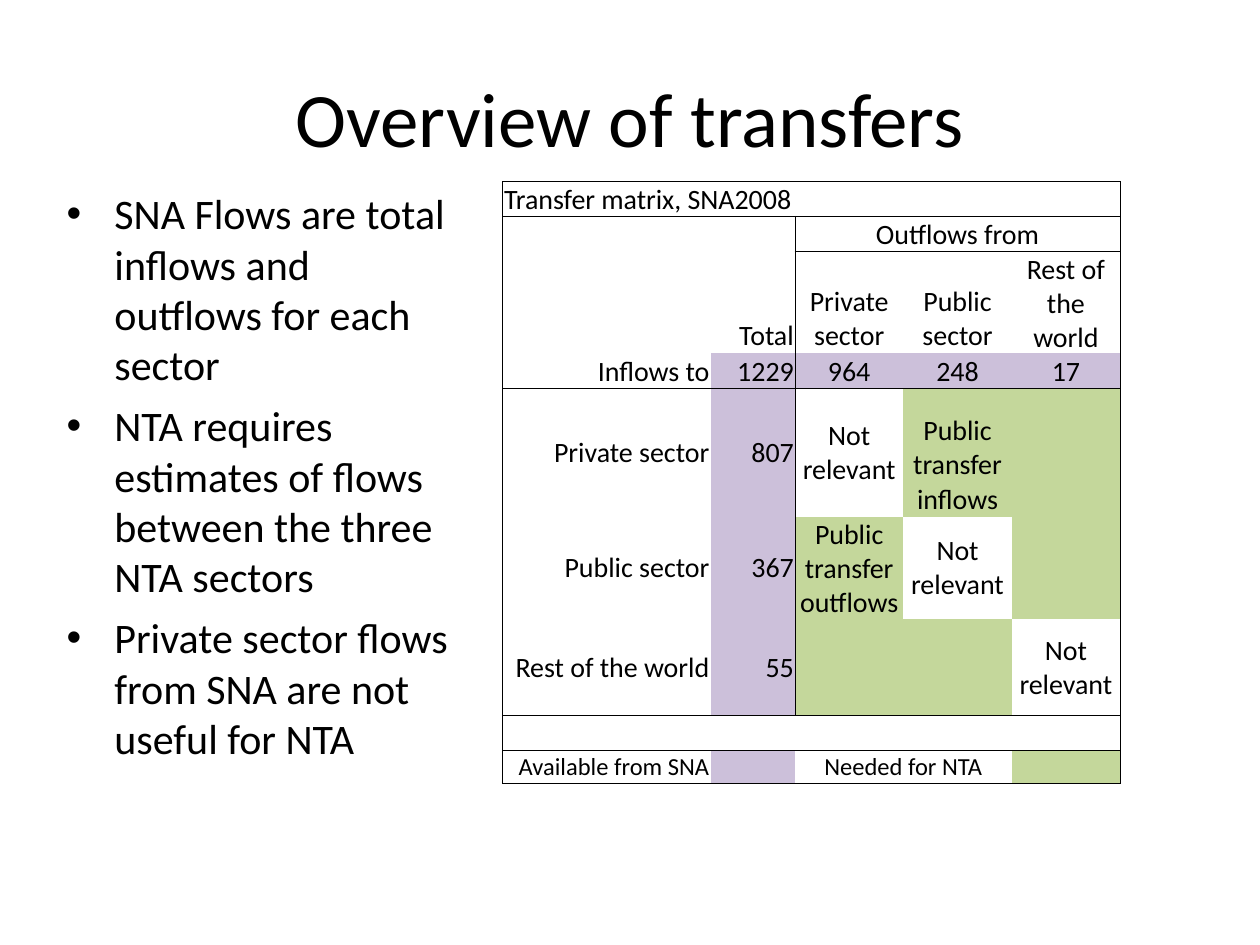
from lxml import etree
from pptx import Presentation
from pptx.dml.color import RGBColor
from pptx.enum import text as t
from pptx.oxml import ns
from pptx.util import Inches, Pt

COLORS = {"ink": "000000", "paper": "FFFFFF", "available": "CCC0DA", "needed": "C4D79B"}
FONT = "Calibri"

TITLE = "Overview of transfers"
POINTS = [
    "SNA Flows are total inflows and outflows for each sector",
    "NTA requires estimates of flows between the three NTA sectors",
    "Private sector flows from SNA are not useful for NTA",
]
MATRIX = [
    ["Transfer matrix, SNA2008", "", "", "", ""],
    ["Total", "", "Outflows from", "", ""],
    ["", "", "Private sector", "Public sector", "Rest of the world"],
    ["Inflows to", "1229", "964", "248", "17"],
    ["Private sector", "807", "Not relevant", "Public transfer inflows", ""],
    ["Public sector", "367", "Public transfer outflows", "Not relevant", ""],
    ["Rest of the world", "55", "", "", "Not relevant"],
    ["", "", "", "", ""],
    ["Available from SNA", "", "Needed for NTA", "", ""],
]
# One letter per cell: a = available from SNA, n = needed for NTA
FILLS = [".....", ".....", ".....", ".aaaa", ".a.nn", ".an.n", ".ann.", ".....", ".a..n"]
FILL_NAMES = {".": "paper", "a": "available", "n": "needed"}
COL_WIDTHS = [1.65, 0.67, 0.86, 0.86, 0.86]
ROW_HEIGHTS = [0.26, 0.26, 0.77, 0.26, 1.02, 0.77, 0.77, 0.24, 0.26]
MERGES = {(0, 0): (1, 5), (1, 0): (2, 2), (1, 2): (1, 3), (7, 0): (1, 5), (8, 2): (1, 2)}
# Ruled grid lines: boundary number -> the columns or rows it runs along
ROW_RULES = {0: range(5), 1: range(5), 2: range(2, 5), 4: range(5),
             7: range(5), 8: range(5), 9: range(5)}
COL_RULES = {0: range(9), 2: range(1, 7), 5: range(9)}


def rgb(name):
    return RGBColor.from_string(COLORS[name])


def style(paragraph, size, align):
    paragraph.alignment = align
    font = paragraph.font
    font.size, font.name, font.bold = Pt(size), FONT, False
    font.color.rgb = rgb("ink")


def add_borders(cell, row, col):
    height, width = MERGES.get((row, col), (1, 1))
    ruled = {
        "lnL": row in COL_RULES.get(col, ()),
        "lnR": row in COL_RULES.get(col + width, ()),
        "lnT": col in ROW_RULES.get(row, ()),
        "lnB": col in ROW_RULES.get(row + height, ()),
    }
    properties = cell._tc.get_or_add_tcPr()
    for place, (side, drawn) in enumerate(ruled.items()):
        line = etree.Element(ns.qn(f"a:{side}"), w=str(Pt(0.5)))
        if drawn:
            solid = etree.SubElement(line, ns.qn("a:solidFill"))
            etree.SubElement(solid, ns.qn("a:srgbClr"), val=COLORS["ink"])
        else:
            etree.SubElement(line, ns.qn("a:noFill"))
        properties.insert(place, line)


def fill_cell(cell, row, col):
    words = MATRIX[row][col]
    cell.text = words
    cell.margin_left = cell.margin_right = cell.margin_top = Inches(0.01)
    cell.margin_bottom = 0
    low = row < 4 or words.startswith("Public transfer")
    cell.vertical_anchor = t.MSO_ANCHOR.BOTTOM if low else t.MSO_ANCHOR.MIDDLE
    if row == 0:
        align = t.PP_ALIGN.LEFT
    else:
        align = t.PP_ALIGN.RIGHT if col < 2 else t.PP_ALIGN.CENTER
    style(cell.text_frame.paragraphs[0], 14 if row == 8 else 16, align)
    cell.fill.solid()
    cell.fill.fore_color.rgb = rgb(FILL_NAMES[FILLS[row][col]])
    add_borders(cell, row, col)


def main():
    deck = Presentation()
    deck.slide_width, deck.slide_height = Inches(10), Inches(7.5)
    slide = deck.slides.add_slide(deck.slide_layouts[5])

    # Title
    title = slide.shapes.title
    title.left, title.top = Inches(0.5), Inches(0.3)
    title.width, title.height = Inches(9), Inches(1.25)
    title.text_frame.text = TITLE
    title.text_frame.vertical_anchor = t.MSO_ANCHOR.MIDDLE
    style(title.text_frame.paragraphs[0], 44, t.PP_ALIGN.CENTER)

    # Bulleted points
    points = slide.shapes.add_textbox(Inches(0.43), Inches(1.44), Inches(3.27), Inches(4.95))
    points.text_frame.word_wrap = True
    points.text_frame.text = "\n".join(POINTS)
    for number, point in enumerate(points.text_frame.paragraphs):
        properties = point._p.get_or_add_pPr()
        properties.set("marL", str(Inches(0.38)))
        properties.set("indent", str(-Inches(0.38)))
        etree.SubElement(properties, ns.qn("a:buFont"), typeface="Arial")
        etree.SubElement(properties, ns.qn("a:buChar"), char="•")
        style(point, 24, t.PP_ALIGN.LEFT)
        point.space_before = Pt(6 if number else 0)

    # Transfer matrix
    matrix = slide.shapes.add_table(
        len(ROW_HEIGHTS), len(COL_WIDTHS), Inches(3.99), Inches(1.44),
        Inches(sum(COL_WIDTHS)), Inches(sum(ROW_HEIGHTS))).table
    matrix.first_row = matrix.horz_banding = False
    for column, width in zip(matrix.columns, COL_WIDTHS):
        column.width = Inches(width)
    for line, height in zip(matrix.rows, ROW_HEIGHTS):
        line.height = Inches(height)
    for row in range(len(ROW_HEIGHTS)):
        for col in range(len(COL_WIDTHS)):
            fill_cell(matrix.cell(row, col), row, col)
    for (row, col), (height, width) in MERGES.items():
        matrix.cell(row, col).merge(matrix.cell(row + height - 1, col + width - 1))

    deck.save("out.pptx")


if __name__ == "__main__":
    main()
